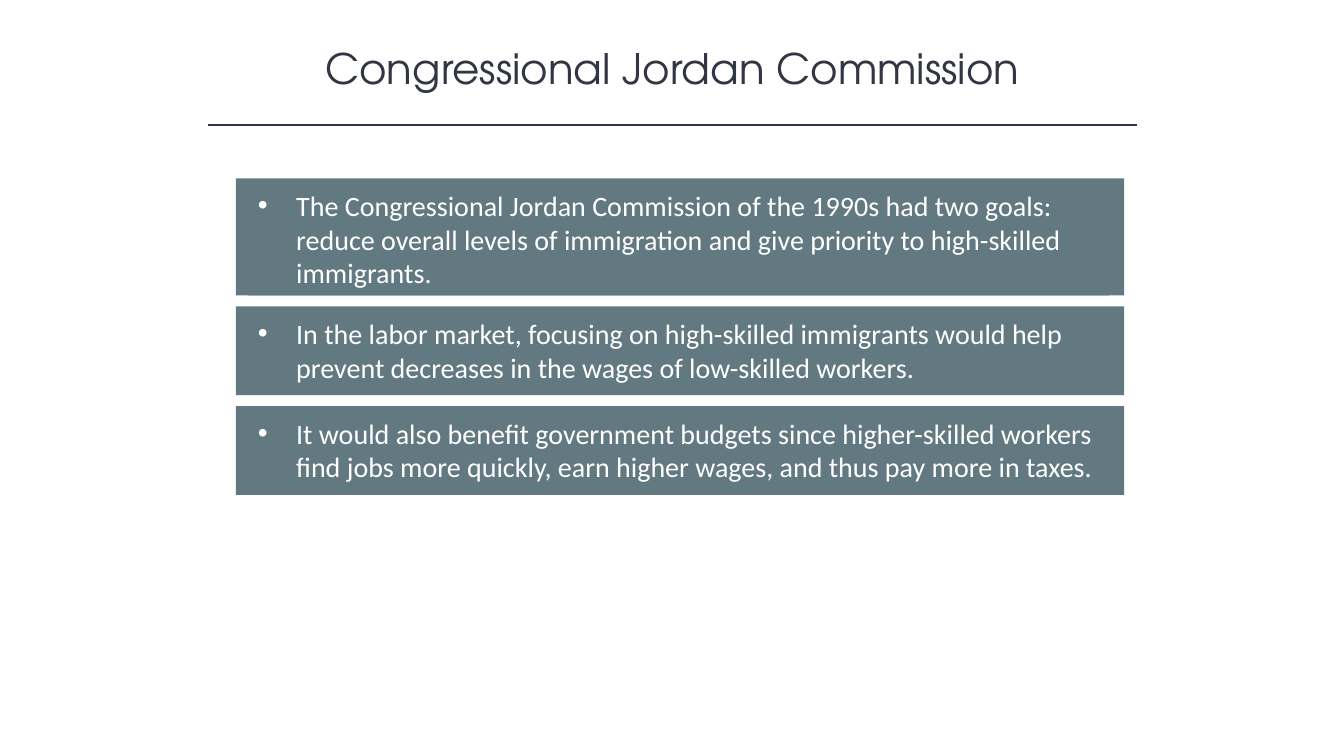
from dataclasses import dataclass

from lxml.etree import SubElement
from pptx import Presentation
from pptx.dml.color import RGBColor
from pptx.enum.shapes import MSO_CONNECTOR, MSO_SHAPE
from pptx.enum.text import MSO_ANCHOR, MSO_AUTO_SIZE, PP_ALIGN
from pptx.oxml.ns import qn
from pptx.shapes.autoshape import Shape
from pptx.shapes.shapetree import GroupShapes
from pptx.slide import Slide
from pptx.text.text import Font, TextFrame, _Paragraph
from pptx.util import Inches, Length, Pt


@dataclass(frozen=True)
class Theme:
    ink: RGBColor = RGBColor(0x32, 0x35, 0x42)
    slate: RGBColor = RGBColor(0x62, 0x79, 0x81)
    white: RGBColor = RGBColor(0xFF, 0xFF, 0xFF)
    head: str = "TeX Gyre Adventor"
    body: str = "Calibri"
    large: Length = Pt(30)
    text: Length = Pt(20)
    rule: Length = Pt(1)


@dataclass(frozen=True)
class Card:
    text: str
    height: Length
    inner: Length


THEME = Theme()
LEFT, TOP, WIDTH = Inches(2.34), Inches(1.77), Inches(8.81)
GAP, INDENT = Inches(0.11), Inches(0.38)
PAD, DROP, INNER = Inches(0.12), Inches(0.05), Inches(8.54)
CARDS = (
    Card("The Congressional Jordan Commission of the 1990s had two goals: "
         "reduce overall levels of immigration and give priority to "
         "high-skilled immigrants.", Inches(1.16), Inches(1.11)),
    Card("In the labor market, focusing on high-skilled immigrants would help "
         "prevent decreases in the wages of low-skilled workers.",
         Inches(0.88), Inches(0.77)),
    Card("It would also benefit government budgets since higher-skilled workers "
         "find jobs more quickly, earn higher wages, and thus pay more in taxes.",
         Inches(0.88), Inches(0.77)),
)
FRAME = {
    "word_wrap": True,
    "auto_size": MSO_AUTO_SIZE.SHAPE_TO_FIT_TEXT,
    "vertical_anchor": MSO_ANCHOR.TOP,
    "margin_left": Inches(0.1),
    "margin_right": Inches(0.1),
    "margin_top": Inches(0.05),
    "margin_bottom": Inches(0.05),
}


def apply(item: object, values: dict) -> None:
    for name, value in values.items():
        setattr(item, name, value)


def style(font: Font, face: str, size: Length, color: RGBColor) -> None:
    apply(font, {"name": face, "size": size, "bold": False})
    font.color.rgb = color


def fill_text(frame: TextFrame, text: str, align: PP_ALIGN) -> _Paragraph:
    apply(frame, FRAME)
    para = frame.paragraphs[0]
    para.text = text
    para.alignment = align
    return para


def add_title(slide: Slide, text: str) -> None:
    title = slide.shapes.title
    apply(title, {"left": Inches(1.67), "top": Inches(0.37),
                  "width": Inches(10), "height": Inches(0.61)})
    para = fill_text(title.text_frame, text, PP_ALIGN.CENTER)
    style(para.runs[0].font, THEME.head, THEME.large, THEME.ink)


def add_rule(slide: Slide) -> None:
    rule = slide.shapes.add_connector(
        MSO_CONNECTOR.STRAIGHT, Inches(2.06), Inches(1.24),
        Inches(11.28), Inches(1.24))
    rule.line.color.rgb = THEME.ink
    rule.line.width = THEME.rule
    SubElement(rule._element.spPr, qn("a:effectLst"))


def add_panel(shapes: GroupShapes, left: Length, top: Length,
              width: Length, height: Length) -> Shape:
    panel = shapes.add_shape(MSO_SHAPE.RECTANGLE, left, top, width, height)
    panel.shadow.inherit = False
    panel.fill.solid()
    panel.fill.fore_color.rgb = THEME.slate
    panel.line.fill.background()
    return panel


def add_bullet(para: _Paragraph) -> None:
    props = para._p.get_or_add_pPr()
    props.set("marL", str(INDENT))
    props.set("indent", str(-INDENT))
    SubElement(props, qn("a:buFont"), typeface="Arial")
    SubElement(props, qn("a:buChar"), char="•")


def add_card(slide: Slide, card: Card, top: Length) -> None:
    shapes = slide.shapes.add_group_shape().shapes
    add_panel(shapes, LEFT, top, WIDTH, card.height)
    box = add_panel(shapes, LEFT + PAD, top + DROP, INNER, card.inner)
    para = fill_text(box.text_frame, card.text, PP_ALIGN.LEFT)
    add_bullet(para)
    style(para.runs[0].font, THEME.body, THEME.text, THEME.white)


def main() -> None:
    deck = Presentation()
    apply(deck, {"slide_width": Inches(13.33), "slide_height": Inches(7.5)})
    slide = deck.slides.add_slide(deck.slide_layouts.get_by_name("Title Only"))
    add_title(slide, "Congressional Jordan Commission")
    add_rule(slide)
    top = TOP
    for card in CARDS:
        add_card(slide, card, top)
        top += card.height + GAP
    deck.save("out.pptx")


if __name__ == "__main__":
    main()
